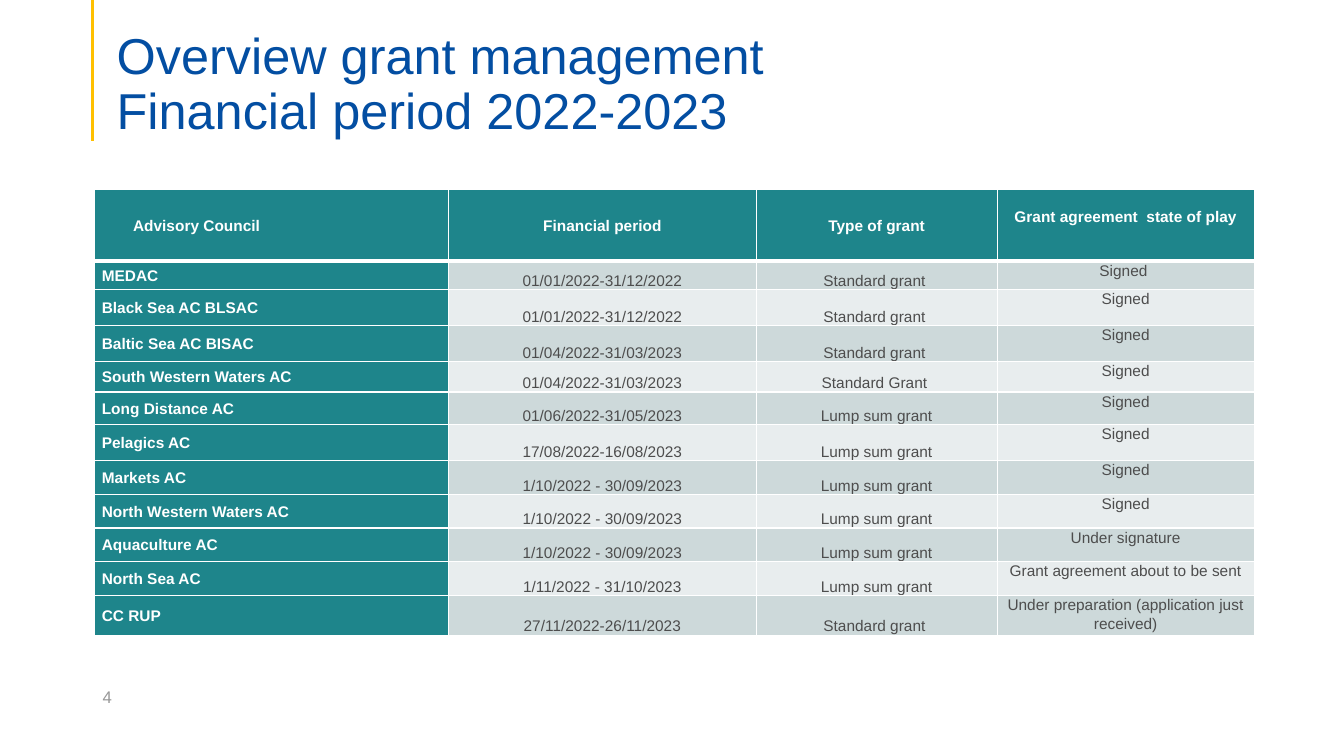
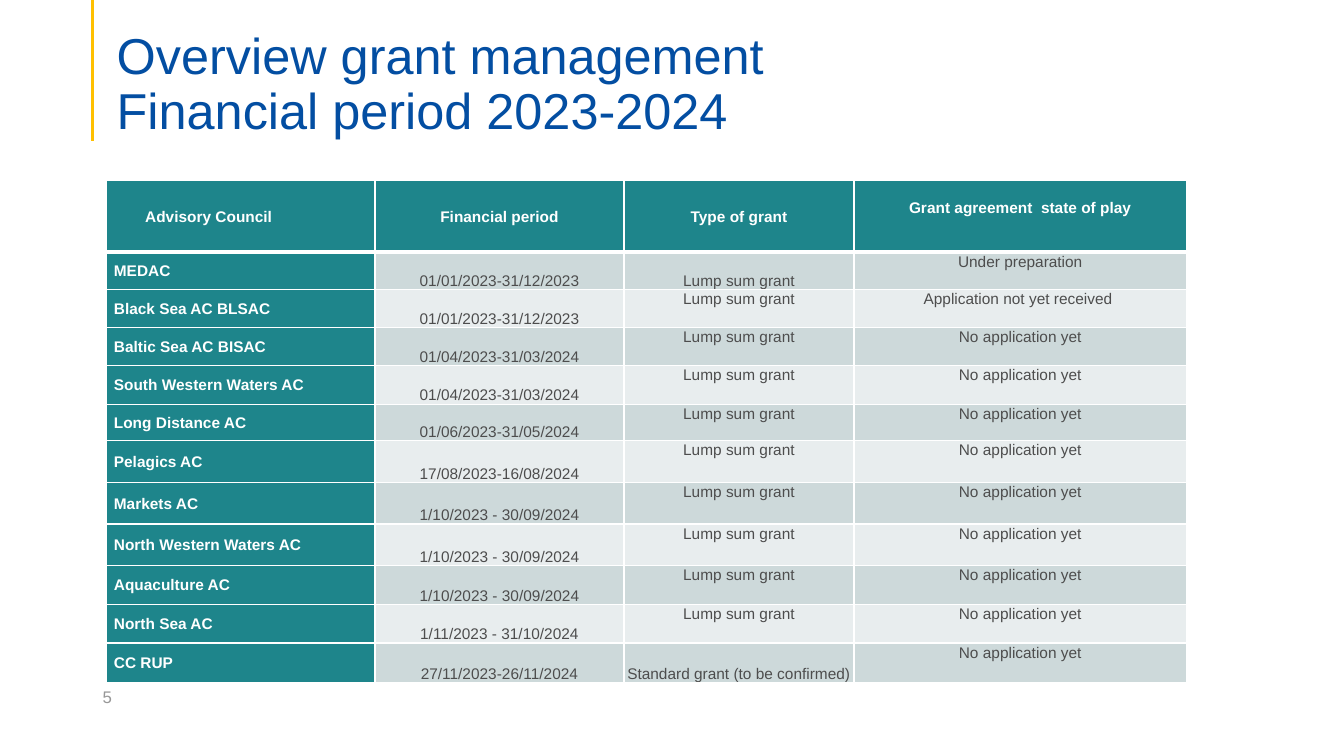
"""Build two slides on the grant management of the Advisory Councils."""
from lxml.etree import SubElement
from pptx import Presentation
from pptx.dml.color import RGBColor
from pptx.enum.shapes import MSO_CONNECTOR
from pptx.enum.text import MSO_ANCHOR, PP_ALIGN
from pptx.oxml.ns import qn
from pptx.util import Inches, Pt

WHITE = RGBColor(0xFF, 0xFF, 0xFF)
BLUE = RGBColor(0x03, 0x4E, 0xA2)
YELLOW = RGBColor(0xFF, 0xC0, 0x00)
TEAL = RGBColor(0x1E, 0x85, 0x8B)
BAND_DARK = RGBColor(0xCD, 0xD9, 0xDA)
BAND_LIGHT = RGBColor(0xE8, 0xED, 0xEE)
TEXT_GREY = RGBColor(0x4D, 0x4D, 0x4D)
NUMBER_GREY = RGBColor(0x97, 0x97, 0x97)
FONT = "Arial"

HEADERS = ["Advisory Council", "Financial period", "Type of grant",
           "Grant agreement  state of play"]
COUNCILS = ["MEDAC", "Black Sea AC BLSAC", "Baltic Sea AC BISAC",
            "South Western Waters AC", "Long Distance AC", "Pelagics AC",
            "Markets AC", "North Western Waters AC", "Aquaculture AC",
            "North Sea AC", "CC RUP"]
HEADER_ANCHORS = [MSO_ANCHOR.MIDDLE] * 3 + [MSO_ANCHOR.TOP]
BODY_ANCHORS = [MSO_ANCHOR.MIDDLE, MSO_ANCHOR.BOTTOM, MSO_ANCHOR.BOTTOM,
                MSO_ANCHOR.TOP]

PERIODS_2022 = ["01/01/2022-31/12/2022", "01/01/2022-31/12/2022",
                "01/04/2022-31/03/2023", "01/04/2022-31/03/2023",
                "01/06/2022-31/05/2023", "17/08/2022-16/08/2023",
                "1/10/2022 - 30/09/2023", "1/10/2022 - 30/09/2023",
                "1/10/2022 - 30/09/2023", "1/11/2022 - 31/10/2023",
                "27/11/2022-26/11/2023"]
GRANTS_2022 = (["Standard grant "] * 3 + ["Standard Grant "]
               + ["Lump sum grant"] * 6 + ["Standard grant "])
STATES_2022 = (["Signed "] + ["Signed"] * 7
               + ["Under signature", "Grant agreement about to be sent",
                  "Under preparation (application just received)"])

PERIODS_2023 = ["01/01/2023-31/12/2023", "01/01/2023-31/12/2023",
                "01/04/2023-31/03/2024", "01/04/2023-31/03/2024",
                "01/06/2023-31/05/2024", "17/08/2023-16/08/2024",
                "1/10/2023 - 30/09/2024", "1/10/2023 - 30/09/2024",
                "1/10/2023 - 30/09/2024", "1/11/2023 - 31/10/2024",
                "27/11/2023-26/11/2024"]
GRANTS_2023 = ["Lump sum grant"] * 10 + ["Standard grant (to be confirmed)"]
STATES_2023 = (["Under preparation", "Application not yet received "]
               + ["No application yet"] * 9)


def write(tf, text, size=11, color=TEXT_GREY, bold=False,
          align=PP_ALIGN.LEFT, spacing=1.0):
    """Put formatted text in the first paragraph of a text frame."""
    p = tf.paragraphs[0]
    p.text = text
    p.alignment = align
    p.line_spacing = spacing
    p.font.name = FONT
    p.font.size = Pt(size)
    p.font.bold = bold
    p.font.color.rgb = color


def add_text(s, text, left, top, width, height, anchor, bottom=0.05, **fmt):
    """Add a wrapped text box."""
    box = s.shapes.add_textbox(Inches(left), Inches(top),
                               Inches(width), Inches(height))
    tf = box.text_frame
    tf.word_wrap = True
    tf.vertical_anchor = anchor
    tf.margin_bottom = Inches(bottom)
    write(tf, text, **fmt)


def add_base(prs, title, number):
    """Add a slide with its accent line, title and number."""
    s = prs.slides.add_slide(prs.slide_layouts[6])
    line = s.shapes.add_connector(MSO_CONNECTOR.STRAIGHT, Inches(0.92), 0,
                                  Inches(0.92), Inches(1.4))
    line.line.color.rgb = YELLOW
    line.line.width = Pt(2.25)
    SubElement(line._element.spPr, qn("a:effectLst"))
    add_text(s, title, 1.06, 0.53, 11.5, 0.86, MSO_ANCHOR.BOTTOM, bottom=0,
             size=36, color=BLUE, spacing=0.9)
    add_text(s, str(number), 0.92, 6.71, 3, 0.4, MSO_ANCHOR.MIDDLE,
             size=12, color=NUMBER_GREY)
    return s


def set_borders(cell, top, bottom):
    """Draw white borders around a cell, with widths in points."""
    tcPr = cell._tc.get_or_add_tcPr()
    for side, width in (("L", 1), ("R", 1), ("T", top), ("B", bottom)):
        ln = SubElement(tcPr, qn(f"a:ln{side}"), w=str(Pt(width)))
        fill = SubElement(ln, qn("a:solidFill"))
        SubElement(fill, qn("a:srgbClr"), val=str(WHITE))


def format_cell(cell, row, col, text, anchor):
    """Fill in and style one cell according to its place in the table."""
    header, label = row == 0, col == 0
    strong = header or label
    set_borders(cell, top=3 if row == 1 else 1, bottom=3 if header else 1)
    cell.fill.solid()
    band = BAND_DARK if row % 2 else BAND_LIGHT
    cell.fill.fore_color.rgb = TEAL if strong else band
    cell.vertical_anchor = anchor
    indent = 0.38 if header else 0.07
    cell.margin_left = Inches(indent if label else 0)
    cell.margin_right = cell.margin_bottom = 0
    cell.margin_top = Inches(
        0.18 if header and anchor == MSO_ANCHOR.TOP else 0)
    write(cell.text_frame, text, color=WHITE if strong else TEXT_GREY,
          bold=strong, spacing=1.07,
          align=PP_ALIGN.LEFT if label else PP_ALIGN.CENTER)


def add_grants(s, left, top, widths, heights, columns, top_grants=()):
    """Add the grant table; top_grants are rows whose grant sits at the top."""
    rows = [HEADERS, *zip(COUNCILS, *columns)]
    frame = s.shapes.add_table(len(rows), len(widths), Inches(left),
                               Inches(top), Inches(sum(widths)),
                               Inches(sum(heights)))
    table = frame.table
    table.first_row = table.horz_banding = False
    for column, width in zip(table.columns, widths):
        column.width = Inches(width)
    for r, (values, height) in enumerate(zip(rows, heights)):
        table.rows[r].height = Inches(height)
        anchors = BODY_ANCHORS if r else HEADER_ANCHORS
        for c, (text, anchor) in enumerate(zip(values, anchors)):
            if c == 2 and r in top_grants:
                anchor = MSO_ANCHOR.TOP
            format_cell(table.cell(r, c), r, c, text, anchor)


def main():
    """Build and save the presentation."""
    prs = Presentation()
    prs.slide_width, prs.slide_height = Inches(13.33), Inches(7.5)

    s = add_base(prs, "Overview grant management \vFinancial period 2022-2023", 4)
    add_grants(s, 0.94, 1.88, [3.51, 3.05, 2.39, 2.55],
               [0.71, 0.28, 0.36, 0.36, 0.3, 0.32, 0.36, 0.34, 0.33, 0.33,
                0.34, 0.36],
               [PERIODS_2022, GRANTS_2022, STATES_2022])

    s = add_base(prs, "Overview grant management \vFinancial period 2023-2024", 5)
    add_grants(s, 1.06, 1.79, [2.66, 2.47, 2.28, 3.3],
               [0.71, 0.37, 0.38, 0.38, 0.38, 0.36, 0.42, 0.41, 0.41, 0.39,
                0.38, 0.39],
               [PERIODS_2023, GRANTS_2023, STATES_2023],
               top_grants=range(2, 11))

    prs.save("out.pptx")


if __name__ == "__main__":
    main()
